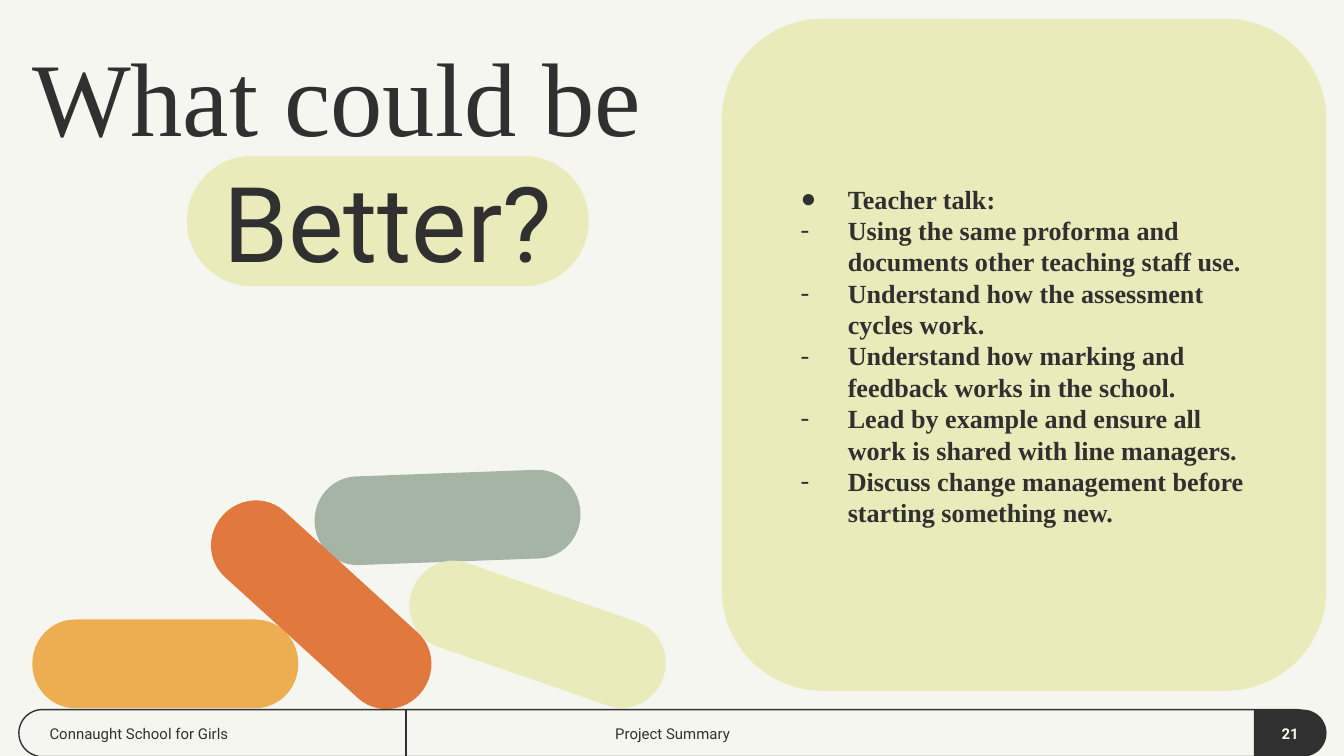
from lxml import etree
from pptx import Presentation
from pptx.dml.color import RGBColor
from pptx.enum.shapes import MSO_CONNECTOR, MSO_SHAPE
from pptx.enum.text import MSO_ANCHOR, PP_ALIGN
from pptx.oxml.ns import qn
from pptx.util import Inches, Pt

ROUND = MSO_SHAPE.ROUNDED_RECTANGLE
CAP = MSO_SHAPE.ROUND_2_SAME_RECTANGLE
PILL = MSO_SHAPE.FLOWCHART_TERMINATOR
STRAIGHT = MSO_CONNECTOR.STRAIGHT
TOP, MIDDLE = MSO_ANCHOR.TOP, MSO_ANCHOR.MIDDLE
LEFT, CENTER = PP_ALIGN.LEFT, PP_ALIGN.CENTER

COLORS = {
    "paper": "F6F6F1", "ink": "303030", "lime": "EAEBBA",
    "sage": "A5B4A5", "gold": "EDAD51", "rust": "E1783D",
}
SERIF, SANS = "Times New Roman", "Roboto"
POINTS = [
    ("●", "Teacher talk:"),
    ("-", "Using the same proforma and documents other teaching staff use."),
    ("-", "Understand how the assessment cycles work."),
    ("-", "Understand how marking and feedback works in the school."),
    ("-", "Lead by example and ensure all work is shared with line managers."),
    ("-", "Discuss change management before starting something new."),
]


def color(name):
    return RGBColor.from_string(COLORS[name])


def add_form(slide, kind, box, fill=None, line=None, turn=0, adj=()):
    shape = slide.shapes.add_shape(kind, *map(Inches, box))
    shape.shadow.inherit = False
    shape.rotation = turn
    for i, value in enumerate(adj):
        shape.adjustments[i] = value
    if fill:
        shape.fill.solid()
        shape.fill.fore_color.rgb = color(fill)
    else:
        shape.fill.background()
    if line:
        shape.line.color.rgb = color(line)
        shape.line.width = Pt(0.75)
    else:
        shape.line.fill.background()
    return shape


def set_frame(shape, anchor):
    frame = shape.text_frame
    frame.word_wrap = True
    frame.vertical_anchor = anchor
    frame.margin_left = frame.margin_right = Inches(0.1)
    frame.margin_top = frame.margin_bottom = Inches(0.1)
    return frame


def add_run(para, text, size, font, ink="ink", bold=False, align=LEFT):
    para.alignment = align
    run = para.add_run()
    run.text = text
    run.font.size = Pt(size)
    run.font.name = font
    run.font.bold = bold
    run.font.color.rgb = color(ink)


def add_label(slide, box, text, size, font, anchor=MIDDLE, **style):
    frame = set_frame(slide.shapes.add_textbox(*map(Inches, box)), anchor)
    add_run(frame.paragraphs[0], text, size, font, **style)


def set_bullet(para, mark):
    props = para._p.get_or_add_pPr()
    props.set("marL", str(Inches(0.5)))
    props.set("indent", str(Inches(-0.35)))
    tint = etree.SubElement(props, qn("a:buClr"))
    etree.SubElement(tint, qn("a:srgbClr"), val=COLORS["ink"])
    etree.SubElement(props, qn("a:buFont"), typeface=SERIF)
    etree.SubElement(props, qn("a:buChar"), char=mark)


def add_panel(slide, x, y, w, h):
    add_form(slide, ROUND, (x, y, w, h), "lime", adj=(0.167,))
    box = (x + 0.34, y + 0.3, w - 0.7, h - 0.59)
    frame = set_frame(slide.shapes.add_textbox(*map(Inches, box)), MIDDLE)
    for i, (mark, text) in enumerate(POINTS):
        para = frame.add_paragraph() if i else frame.paragraphs[0]
        set_bullet(para, mark)
        add_run(para, text, 14, SERIF, bold=True)


def add_title(slide, x, y, w, h):
    add_label(slide, (x, y, w, h), "What could be", 56, SERIF, anchor=TOP)
    badge = add_form(slide, ROUND, (x + 1.25, y + 1.02, 2.99, 0.97),
                     "lime", adj=(0.5,))
    para = set_frame(badge, MIDDLE).paragraphs[0]
    add_run(para, "Better?", 56, SANS, align=CENTER)


def add_pills(slide, x, y):
    # Offset, fill and turn of each pill in the pile
    for dx, dy, fill, turn in [
        (2.1, 0, "sage", 357.9),
        (2.77, 0.87, "lime", 19.1),
        (0, 1.09, "gold", 0),
        (1.16, 0.65, "rust", 42.3),
    ]:
        add_form(slide, PILL, (x + dx, y + dy, 1.98, 0.66), fill, turn=turn)


def add_footer(slide, x, y, w, h):
    def upright(left, width):
        # Unturned box of a cap that lies on its side
        return left + (width - h) / 2, y + (h - width) / 2, h, width

    add_form(slide, CAP, upright(x, w - 0.05), line="ink", turn=90,
             adj=(0.5, 0.5))
    rule = slide.shapes.add_connector(
        STRAIGHT, *map(Inches, (x + 2.88, y, x + 2.88, y + h)))
    rule.line.color.rgb = color("ink")
    rule.line.width = Pt(0.75)
    etree.SubElement(rule._element.spPr, qn("a:effectLst"))
    tab = 0.54
    add_form(slide, CAP, upright(x + w - tab, tab), "ink", turn=90,
             adj=(0.5, 0))
    add_label(slide, (x + 0.13, y, 2.41, h), "Connaught School for Girls",
              8, SANS)
    add_label(slide, (x + 3.74, y, 2.25, h), "Project Summary", 8, SANS,
              align=CENTER)
    add_label(slide, (x + w - tab, y, tab, h), "21", 8, SANS,
              ink="paper", bold=True, align=CENTER)


def main():
    deck = Presentation()
    deck.slide_width = Inches(10)
    deck.slide_height = deck.slide_width * 9 // 16
    slide = deck.slides.add_slide(deck.slide_layouts[6])
    slide.background.fill.solid()
    slide.background.fill.fore_color.rgb = color("paper")
    add_panel(slide, 5.37, 0.14, 4.5, 5)
    add_title(slide, 0.14, 0.14, 5.01, 3.23)
    add_pills(slide, 0.24, 3.52)
    add_footer(slide, 0.14, 5.28, 9.73, 0.35)
    deck.save("out.pptx")


if __name__ == "__main__":
    main()
